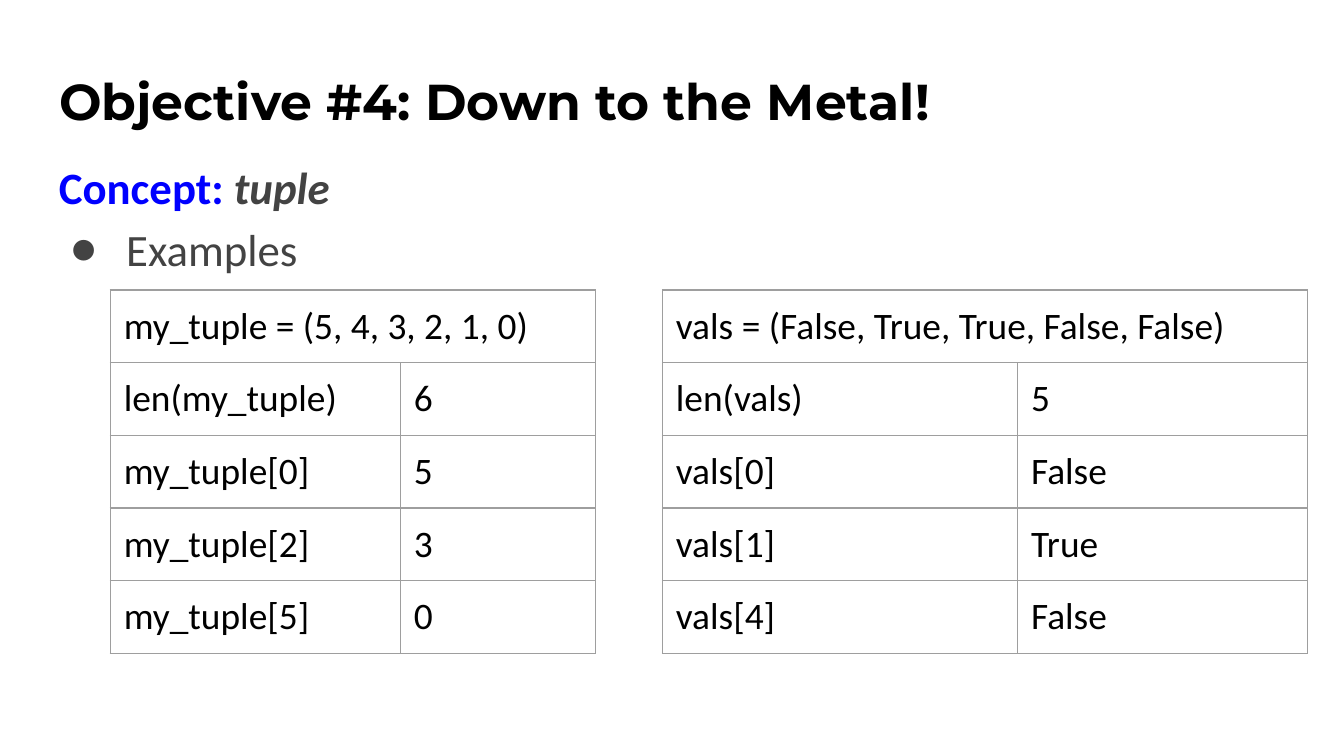
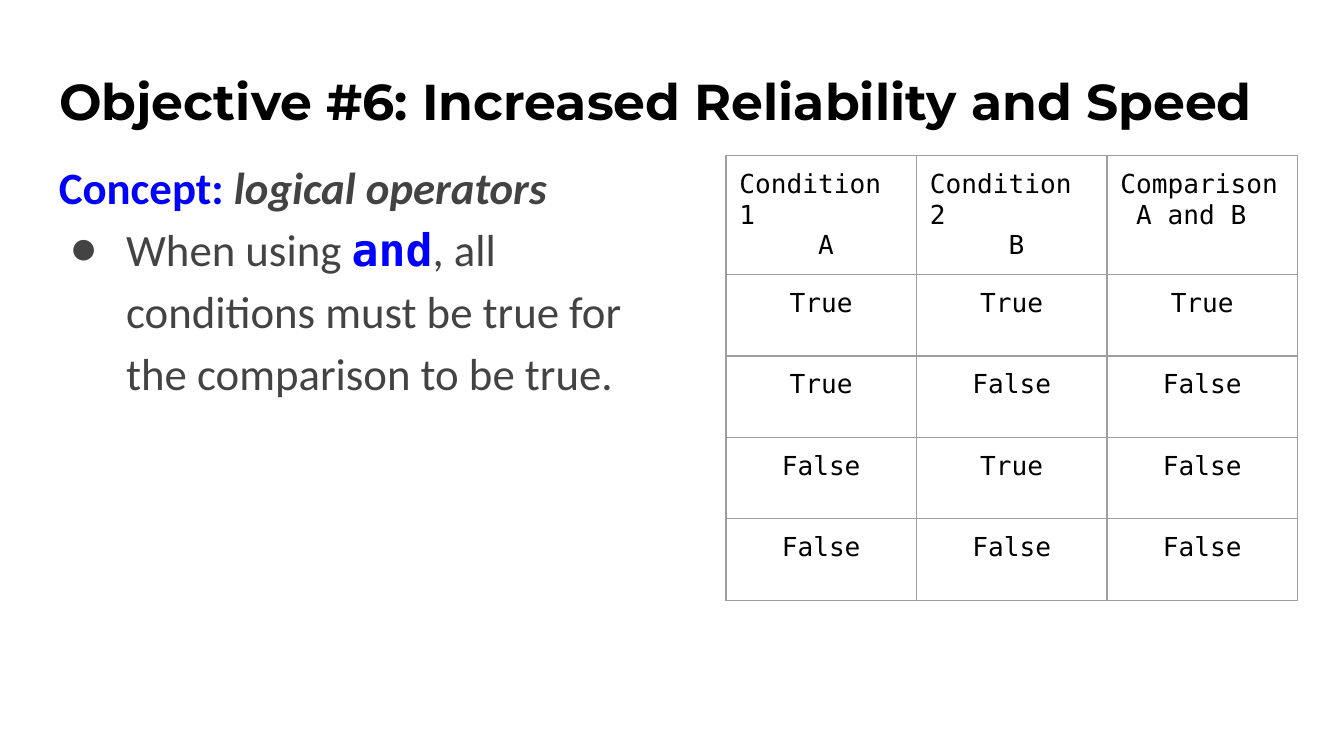
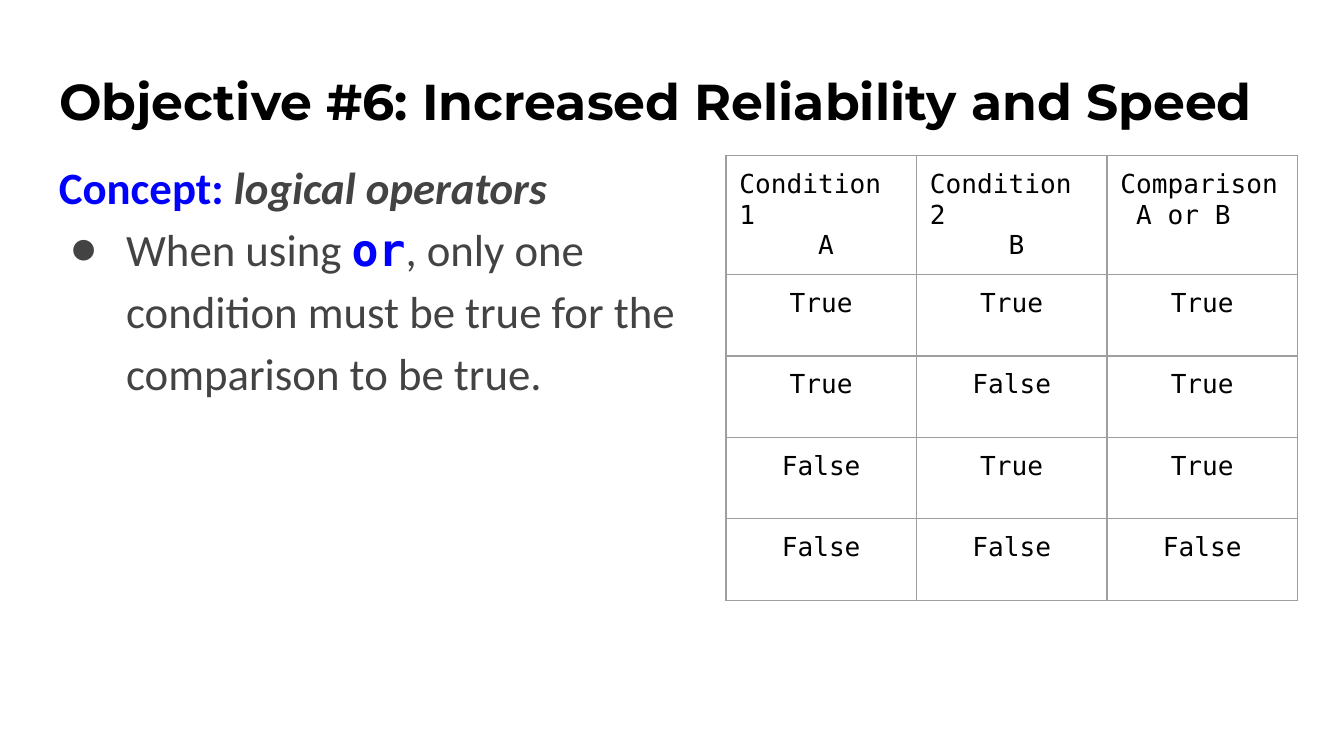
from itertools import product

from lxml import etree
from pptx import Presentation
from pptx.dml.color import RGBColor
from pptx.enum.text import MSO_ANCHOR, MSO_AUTO_SIZE, PP_ALIGN
from pptx.oxml.ns import qn
from pptx.util import Pt

LEFT, CENTER = PP_ALIGN.LEFT, PP_ALIGN.CENTER
TOP = MSO_ANCHOR.TOP
NO_AUTOFIT = MSO_AUTO_SIZE.NONE
TITLE_ONLY = 5

BLACK, BLUE, GREY, RULE = "000000", "0000FF", "434343", "9E9E9E"
SANS, MONO, DISPLAY = "Calibri", "DejaVu Sans Mono", "Montserrat"
INSET = 7.2
MONO_ADVANCE = 8.43  # width of one 14 pt character


def color(hex_string):
    return RGBColor.from_string(hex_string)


def add_text(para, text, size=24, font=SANS, ink=GREY, bold=False, italic=False):
    span = para.add_run()
    span.text = text
    span.font.size = Pt(size)
    span.font.name = font
    span.font.color.rgb = color(ink)
    span.font.bold = bold
    span.font.italic = italic


def add_color_fill(parent, hex_string):
    etree.SubElement(parent, qn("a:srgbClr"), val=hex_string)


def add_bullet(para, indent, hanging):
    props = para._p.get_or_add_pPr()
    props.set("marL", str(Pt(indent)))
    props.set("indent", str(-Pt(hanging)))
    add_color_fill(etree.SubElement(props, qn("a:buClr")), GREY)
    etree.SubElement(props, qn("a:buFont"), typeface=SANS)
    etree.SubElement(props, qn("a:buChar"), char="●")


class Lesson:
    """Holds the shared style, the deck and the current slide."""

    def __init__(self):
        self.deck = Presentation()
        self.deck.slide_width, self.deck.slide_height = Pt(720), Pt(405)
        self.page = None

    def place(self, shape, left, top, width, height):
        shape.left, shape.top = Pt(left), Pt(top)
        shape.width, shape.height = Pt(width), Pt(height)
        frame = shape.text_frame
        frame.word_wrap = True
        frame.auto_size = NO_AUTOFIT
        frame.vertical_anchor = TOP
        frame.margin_left = frame.margin_right = Pt(INSET)
        frame.margin_top = frame.margin_bottom = Pt(INSET)
        return frame

    def start(self, title):
        self.page = self.deck.slides.add_slide(self.deck.slide_layouts[TITLE_ONLY])
        fill = self.page.background.fill
        fill.solid()
        fill.fore_color.rgb = color("FFFFFF")
        frame = self.place(self.page.shapes.title, 24.5, 30.4, 671, 49)
        para = frame.paragraphs[0]
        para.alignment = LEFT
        add_text(para, title, size=27, font=DISPLAY, ink=BLACK, bold=True)

    def concept(self, term, bullet, width, height):
        """Concept line and one bullet, given as (text, format) pairs."""
        box = self.page.shapes.add_textbox(0, 0, 0, 0)
        frame = self.place(box, 24.5, 74.2, width, height)
        heading, point = frame.paragraphs[0], frame.add_paragraph()
        heading.line_spacing = point.line_spacing = 1.15
        add_text(heading, "Concept: ", ink=BLUE, bold=True)
        add_text(heading, term, bold=True, italic=True)
        add_bullet(point, indent=36, hanging=30)
        for text, style in bullet:
            add_text(point, text, **style)

    def table(self, left, top, widths, heights):
        shape = self.page.shapes.add_table(
            len(heights), len(widths), Pt(left), Pt(top),
            Pt(sum(widths)), Pt(sum(heights)))
        table = shape.table
        table.first_row = table.horz_banding = False
        for column, width in zip(table.columns, widths):
            column.width = Pt(width)
        for row, height in zip(table.rows, heights):
            row.height = Pt(height)
        for cell in table.iter_cells():
            self.style_cell(cell)
        return table

    def style_cell(self, cell):
        cell.margin_left = cell.margin_right = Pt(INSET)
        cell.margin_top = cell.margin_bottom = Pt(INSET)
        props = cell._tc.get_or_add_tcPr()
        for side in ("a:lnL", "a:lnR", "a:lnT", "a:lnB"):
            line = etree.SubElement(props, qn(side), w=str(Pt(0.75)))
            add_color_fill(etree.SubElement(line, qn("a:solidFill")), RULE)
        cell.fill.background()

    def example_table(self, left, widths, definition, rows):
        table = self.table(left, 155.4, widths, [38.9] * (len(rows) + 1))
        table.cell(0, 0).merge(table.cell(0, 1))
        for r, texts in enumerate([(definition,), *rows]):
            for c, text in enumerate(texts):
                para = table.cell(r, c).text_frame.paragraphs[0]
                add_text(para, text, size=20, ink=BLACK)

    def truth_table(self, operator, combine):
        table = self.table(388.9, 83.3, [102.1] * 3, [63.6] + [43.65] * 4)
        mono = {"size": 14, "font": MONO, "ink": BLACK}

        # Headings: second line indented by whole characters
        headings = [("Condition 1", "A", 5), ("Condition 2", "B", 5),
                    ("Comparison", f"A {operator} B", 1)]
        for c, (name, formula, indent) in enumerate(headings):
            frame = table.cell(0, c).text_frame
            add_text(frame.paragraphs[0], name, **mono)
            para = frame.add_paragraph()
            para._p.get_or_add_pPr().set("marL", str(Pt(indent * MONO_ADVANCE)))
            add_text(para, formula, **mono)

        # Every combination of the two conditions
        for r, (a, b) in enumerate(product((True, False), repeat=2), start=1):
            for c, value in enumerate((a, b, combine(a, b))):
                para = table.cell(r, c).text_frame.paragraphs[0]
                para.alignment = CENTER
                add_text(para, str(value), **mono)


def main():
    lesson = Lesson()

    # Tuples
    lesson.start("Objective #4: Down to the Metal!")
    lesson.concept("tuple", [("Examples", {})], 654.5, 106.6)
    lesson.example_table(
        59.1, [155.4, 104.6], "my_tuple = (5, 4, 3, 2, 1, 0)",
        [("len(my_tuple)", "6"), ("my_tuple[0]", "5"),
         ("my_tuple[2]", "3"), ("my_tuple[5]", "0")])
    lesson.example_table(
        354.9, [190.3, 155.4], "vals = (False, True, True, False, False)",
        [("len(vals)", "5"), ("vals[0]", "False"),
         ("vals[1]", "True"), ("vals[4]", "False")])

    # Logical operators
    operators = [
        ("and", ", all conditions must be true for the comparison to be true.",
         lambda a, b: a and b),
        ("or", ", only one condition must be true for the comparison to be true.",
         lambda a, b: a or b),
    ]
    for operator, meaning, combine in operators:
        lesson.start("Objective #6: Increased Reliability and Speed")
        keyword = {"font": MONO, "ink": BLUE, "bold": True}
        lesson.concept(
            "logical operators",
            [("When using ", {}), (operator, keyword), (meaning, {})], 347, 260)
        lesson.truth_table(operator, combine)

    lesson.deck.save("out.pptx")


if __name__ == "__main__":
    main()
